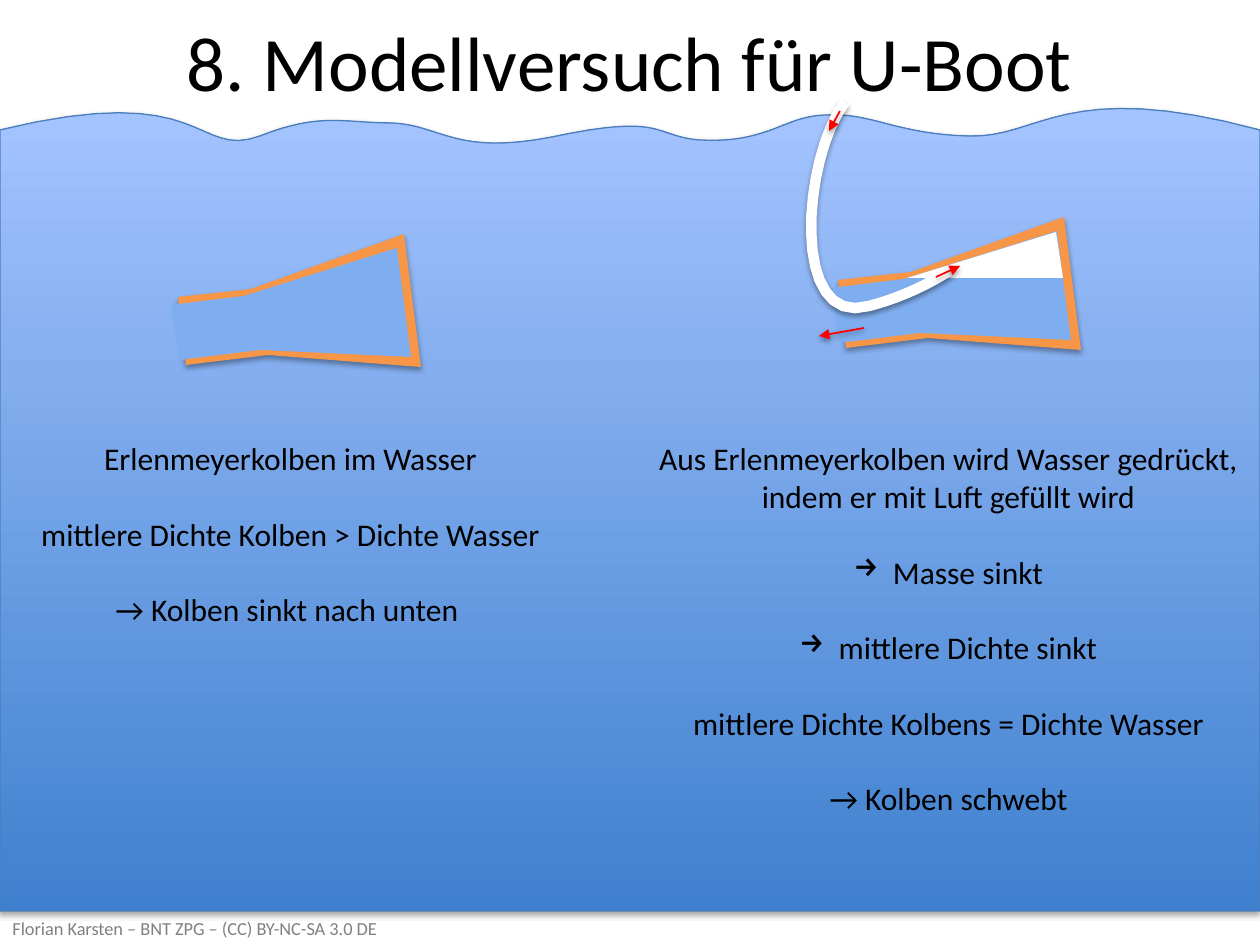
import lxml.etree
import pptx
import pptx.dml.color
import pptx.enum.shapes
import pptx.enum.text
import pptx.oxml
import pptx.oxml.ns
import pptx.util

PX = 914400 / 126
CURVE_STEPS = 16
COLORS = {
    "deep": "3F80CE", "surface": "A4C4FF", "shore": "4B7EBC", "glass": "F79646",
    "water": "7FAEF0", "air": "FFFFFF", "flow": "FF0000", "text": "000000",
    "credit": "808080", "shadow": "000000",
}
WAVES = [
    [(208, 79), (195, 160), (260, 136)], [(321, 112), (344, 123), (392, 123)],
    [(441, 125), (455, 156), (552, 137)], [(665, 113), (653, 136), (699, 140)],
    [(770, 144), (784, 115), (828, 115)], [(873, 113), (896, 134), (968, 136)],
    [(1040, 139), (1063, 77), (1260, 130)],
]
TUBE = [[(924, 287), (896, 299), (869, 306)], [(789, 329), (803, 157), (845, 102)]]
GLASS = [(186, 365), (178, 297), (251, 289), (404, 234), (421, 367), (268, 355)]
CONTENT = [(179, 360), (171, 305), (244, 296), (397, 248), (411, 357), (260, 350)]
AIR = [(907, 278), (1056, 232), (1063, 278)]
FLOWS = [((840, 111), (829, 131)), ((936, 277), (960, 266)), ((864, 328), (819, 336))]
SINKING = [
    ("Erlenmeyerkolben im Wasser", False),
    ("mittlere Dichte Kolben > Dichte Wasser", False),
    ("→ Kolben sinkt nach unten ", False),
]
FLOATING = [
    ("Aus Erlenmeyerkolben wird Wasser gedrückt,\nindem er mit Luft gefüllt wird", False),
    ("Masse sinkt", True),
    ("mittlere Dichte sinkt", True),
    ("mittlere Dichte Kolbens = Dichte Wasser", False),
    ("→ Kolben schwebt", False),
]


def emu(px):
    """Turn px into EMU."""
    return pptx.util.Emu(round(px * PX))


def rgb(name):
    """Look up a colour by its role."""
    return pptx.dml.color.RGBColor.from_string(COLORS[name])


def apply(target, values):
    """Set attributes of target from a dict of format values."""
    for name, value in values.items():
        setattr(target, name, value)


def trace(start, curves):
    """Return the points along a chain of cubic curves."""
    points = [start]
    for a, b, end in curves:
        origin = points[-1]
        for step in range(1, CURVE_STEPS + 1):
            t = step / CURVE_STEPS
            weights = ((1 - t) ** 3, 3 * t * (1 - t) ** 2, 3 * t * t * (1 - t), t ** 3)
            points.append(tuple(
                sum(w * v for w, v in zip(weights, axis))
                for axis in zip(origin, a, b, end)
            ))
    return points


def set_effects(drawing, alpha=0):
    """Give a drawing a soft shadow below it, or none."""
    properties = drawing._element.spPr
    for old in properties.findall(pptx.oxml.ns.qn("a:effectLst")):
        properties.remove(old)
    shadow = (
        f'<a:outerShdw blurRad="39370" dist="22860" dir="5400000" rotWithShape="0">'
        f'<a:srgbClr val="{COLORS["shadow"]}"><a:alpha val="{alpha * 1000}"/></a:srgbClr>'
        f'</a:outerShdw>'
    ) if alpha else ""
    properties.append(pptx.oxml.parse_xml(
        f'<a:effectLst {pptx.oxml.ns.nsdecls("a")}>{shadow}</a:effectLst>'
    ))


def add_outline(slide, points, fill=None, line=None, width=1, shadow=0, close=True):
    """Draw a freeform through the points."""
    corners = [(emu(x), emu(y)) for x, y in points]
    builder = slide.shapes.build_freeform(*corners[0], scale=1.0)
    builder.add_line_segments(corners[1:], close=close)
    outline = builder.convert_to_shape()
    if fill:
        outline.fill.solid()
        outline.fill.fore_color.rgb = rgb(fill)
    else:
        outline.fill.background()
    if line:
        outline.line.color.rgb = rgb(line)
        outline.line.width = pptx.util.Pt(width)
    else:
        outline.line.fill.background()
    set_effects(outline, shadow)
    return outline


def add_sea(slide):
    """Draw the water with its wavy surface."""
    surface = trace((0, 130), WAVES)
    sea = add_outline(slide, surface + [(1260, 911), (0, 911)],
                      line="shore", width=0.75, shadow=35)
    sea.fill.gradient()
    sea.fill.gradient_angle = 90
    for stop, name in zip(sea.fill.gradient_stops, ("deep", "surface")):
        stop.color.rgb = rgb(name)


def add_flask(slide, dx=0, dy=0):
    """Draw a tilted flask filled with water."""
    for points, fill, shadow in ((GLASS, "glass", 35), (CONTENT, "water", 0)):
        add_outline(slide, [(x + dx, y + dy) for x, y in points], fill, shadow=shadow)


def add_flow(slide, start, end):
    """Draw an arrow for moving air or water."""
    flow = slide.shapes.add_connector(
        pptx.enum.shapes.MSO_CONNECTOR.STRAIGHT, *map(emu, start + end))
    flow.line.color.rgb = rgb("flow")
    flow.line.width = pptx.util.Pt(1)
    lxml.etree.SubElement(flow.line._get_or_add_ln(),
                          pptx.oxml.ns.qn("a:tailEnd"), type="triangle")
    set_effects(flow, 38)


def add_text(slide, box, lines, size, color="text", align="CENTER",
             anchor="MIDDLE", wrap=True, gap=0):
    """Write paragraphs, each with or without an arrow bullet."""
    frame = slide.shapes.add_textbox(*map(emu, box)).text_frame
    apply(frame, {"word_wrap": wrap,
                  "vertical_anchor": pptx.enum.text.MSO_ANCHOR[anchor]})
    for index, (words, bulleted) in enumerate(lines):
        paragraph = frame.add_paragraph() if index else frame.paragraphs[0]
        apply(paragraph, {"text": words,
                          "alignment": pptx.enum.text.PP_ALIGN[align],
                          "space_before": pptx.util.Pt(gap if index else 0)})
        for run in paragraph.runs:
            apply(run.font, {"name": "Calibri", "size": pptx.util.Pt(size)})
            run.font.color.rgb = rgb(color)
        if bulleted:
            properties = paragraph._p.get_or_add_pPr()
            properties.set("marL", str(emu(39)))
            properties.set("indent", str(-emu(39)))
            lxml.etree.SubElement(properties, pptx.oxml.ns.qn("a:buChar"), char="→")


def main():
    """Build the slide and save it."""
    deck = pptx.Presentation()
    apply(deck, {"slide_width": emu(1260), "slide_height": emu(945)})
    slide = deck.slides.add_slide(deck.slide_layouts[6])
    add_sea(slide)
    add_text(slide, (0, 0, 1260, 122), [("8. Modellversuch für U-Boot", False)], 44)
    add_text(slide, (0, 911, 1000, 34),
             [("Florian Karsten – BNT ZPG – (CC) BY-NC-SA 3.0 DE", False)],
             10.5, "credit", "LEFT")
    add_flask(slide)
    add_flask(slide, 660, -17)
    for box, lines in (((24, 433, 533, 204), SINKING), ((642, 433, 613, 394), FLOATING)):
        add_text(slide, box, lines, 18, anchor="TOP", wrap=False, gap=21.6)
    add_outline(slide, AIR, "air")
    add_outline(slide, trace((949, 271), TUBE), line="air", width=6, shadow=38, close=False)
    for start, end in FLOWS:
        add_flow(slide, start, end)
    deck.save("out.pptx")


if __name__ == "__main__":
    main()
